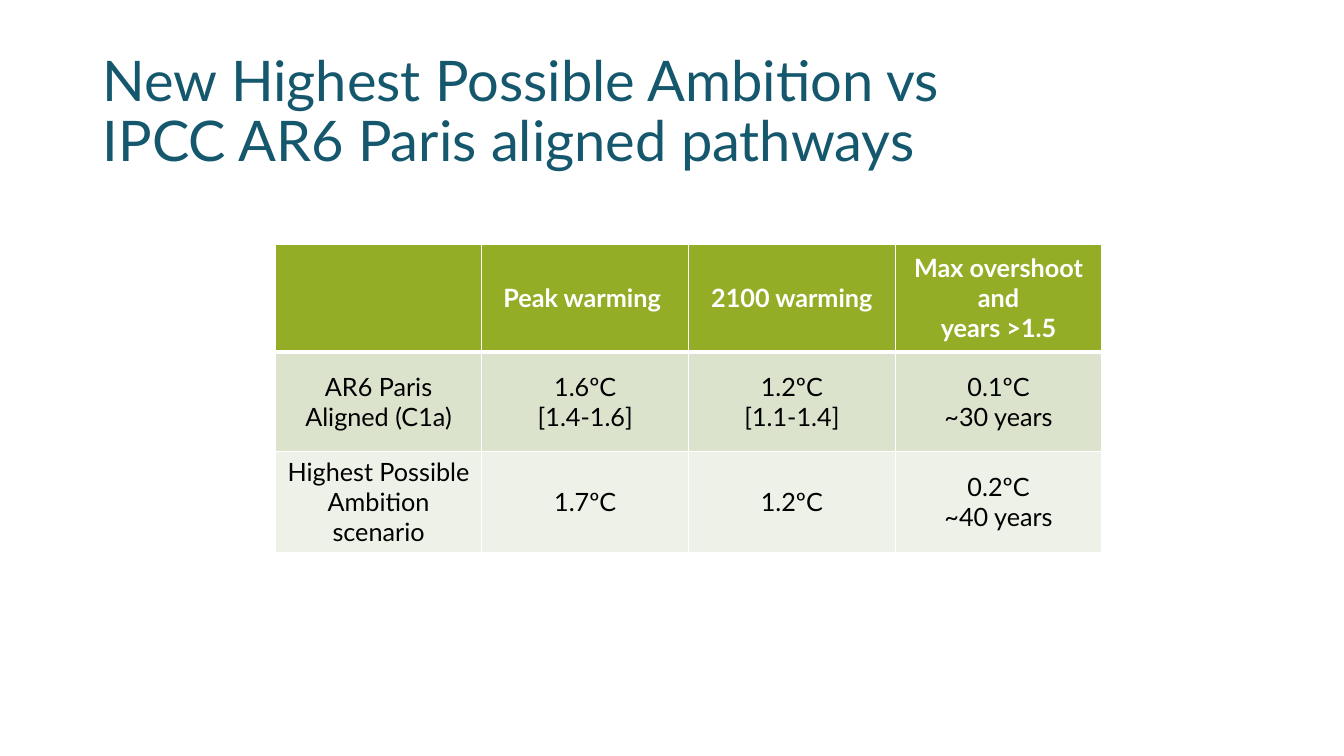
"""Build the slide comparing highest possible ambition with AR6 pathways."""
import pptx
import pptx.util
import pptx.dml.color
import pptx.enum.text
import pptx.oxml
import pptx.oxml.ns
from pptx.util import Inches

RGBColor = pptx.dml.color.RGBColor
ALIGN = pptx.enum.text.PP_ALIGN
MIDDLE = pptx.enum.text.MSO_ANCHOR.MIDDLE
TEAL = RGBColor(0x15, 0x58, 0x6D)
GREEN = RGBColor(0x94, 0xAD, 0x27)
SAGE = RGBColor(0xDC, 0xE3, 0xCD)
PALE = RGBColor(0xEE, 0xF1, 0xE8)
WHITE = RGBColor(0xFF, 0xFF, 0xFF)
BLACK = RGBColor(0x00, 0x00, 0x00)


def write(frame, text, size=18, color=BLACK, bold=False, align=ALIGN.CENTER, space=None):
    frame.text = text
    for para in frame.paragraphs:
        para.alignment = align
        para.line_spacing = space
        font = para.font
        font.name, font.size, font.bold = "Lato", pptx.util.Pt(size), bold
        font.color.rgb = color


def edge(cell, side, width):
    line = pptx.oxml.parse_xml(
        f'<a:{side} {pptx.oxml.ns.nsdecls("a")} w="{pptx.util.Pt(width)}">'
        f'<a:solidFill><a:srgbClr val="{WHITE}"/></a:solidFill></a:{side}>')
    cell._tc.get_or_add_tcPr().append(line)


deck = pptx.Presentation()
deck.slide_width, deck.slide_height = Inches(13.33), Inches(7.5)
slide = deck.slides.add_slide(deck.slide_layouts[5])

title = slide.shapes.title
title.left, title.top = Inches(0.92), Inches(0.4)
title.width, title.height = Inches(9.54), Inches(1.45)
frame = title.text_frame
frame.word_wrap = True
frame.auto_size = pptx.enum.text.MSO_AUTO_SIZE.NONE
frame.vertical_anchor = MIDDLE
write(frame, "New Highest Possible Ambition vs IPCC AR6 Paris aligned pathways",
      size=40, color=TEAL, align=ALIGN.LEFT, space=0.9)

rows = [
    ["", "Peak warming ", "2100 warming", "Max overshoot\nand\nyears >1.5"],
    ["AR6 Paris Aligned (C1a)", "1.6ºC\n[1.4-1.6]", "1.2ºC\n[1.1-1.4]", "0.1ºC\n~30 years"],
    ["Highest Possible Ambition scenario", "1.7ºC", "1.2ºC", "0.2ºC\n~40 years"],
]
looks = [(1.07, GREEN, WHITE), (0.99, SAGE, BLACK), (0.99, PALE, BLACK)]

table = slide.shapes.add_table(
    3, 4, Inches(2.73), Inches(2.42), Inches(8.2), Inches(3.05)).table
for col in table.columns:
    col.width = Inches(2.05)
for r, (texts, (height, fill, ink)) in enumerate(zip(rows, looks)):
    table.rows[r].height = Inches(height)
    for c, text in enumerate(texts):
        cell = table.cell(r, c)
        cell.vertical_anchor = MIDDLE
        write(cell.text_frame, text, color=ink, bold=r == 0)
        edge(cell, "lnL", 1)
        edge(cell, "lnR", 1)
        edge(cell, "lnT", 3 if r == 1 else 1)
        edge(cell, "lnB", 3 if r == 0 else 1)
        cell.fill.solid()
        cell.fill.fore_color.rgb = fill

deck.save("out.pptx")
